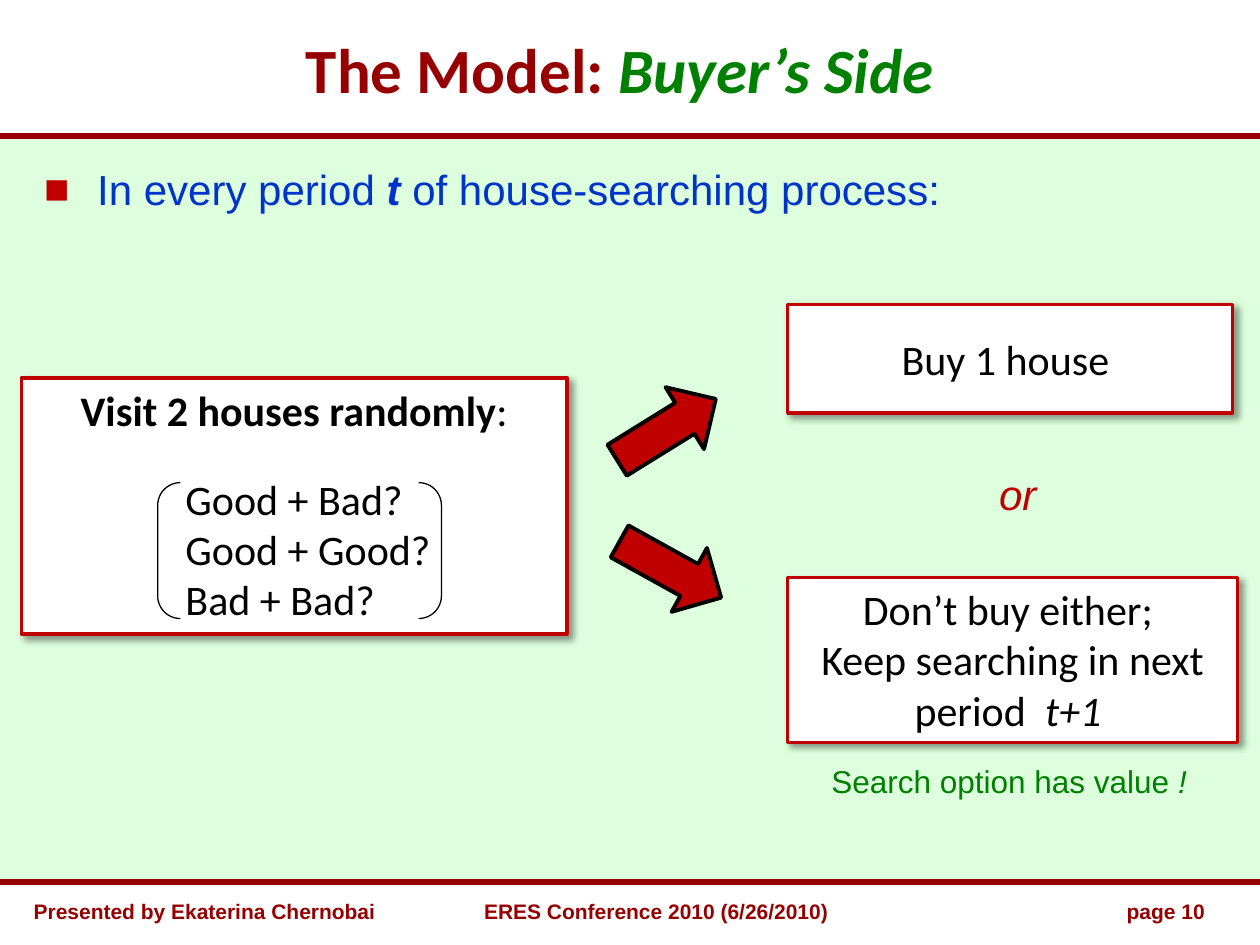
from lxml.etree import SubElement
from pptx import Presentation
from pptx.dml.color import RGBColor
from pptx.enum.shapes import MSO_CONNECTOR, MSO_SHAPE
from pptx.enum.text import MSO_ANCHOR, PP_ALIGN
from pptx.oxml.ns import qn
from pptx.util import Cm, Pt

MAROON, RED, GREEN, BLUE = "960000", "C00000", "008000", "0033CC"
BLACK, WHITE, MINT = "000000", "FFFFFF", "DDFFDD"
LEFT, CENTER, RIGHT = PP_ALIGN.LEFT, PP_ALIGN.CENTER, PP_ALIGN.RIGHT
TOP, MIDDLE = MSO_ANCHOR.TOP, MSO_ANCHOR.MIDDLE
SLIDE_W, SLIDE_H = 25.4, 19.05
RULES = (2.74, 17.78)  # heights of the lines above and below the body

# Content: a paragraph is a list of (text, style) runs, style made of "b" and "i"
TITLE = [("The Model: ", "b"), ("Buyer’s Side", "bi")]
INTRO = [("In every period ", ""), ("t", "bi"), (" of house-searching process:", "")]
VISIT = [("Visit 2 houses randomly", "b"), (":", "")]
OUTCOMES = ["Good + Bad?", "Good + Good?", "Bad + Bad?"]

# Boxes: left, top, width, height, anchor, paragraphs
BOXES = [
    (0.43, 7.62, 11, 5.16, TOP, [VISIT] + [[(pair, "")] for pair in OUTCOMES]),
    (15.88, 6.14, 8.97, 2.19, MIDDLE, [[("Buy 1 house ", "")]]),
    (15.88, 11.64, 9.07, 3.33, TOP, [
        [("Don’t buy either; ", "")],
        [("Keep searching in next period  ", ""), ("t+1", "i"), (" ", "")]]),
]
# Labels: left, top, width, height, size, colour, alignment, runs
LABELS = [
    (19.89, 9.31, 1.4, 1.3, 24, RED, LEFT, [("or", "i")]),
    (16.51, 15.24, 8.26, 1.07, 18, GREEN, LEFT,
     [("Search option has value ", ""), ("!", "i")]),
    (0.43, 17.98, 8.05, 0.64, 12, MAROON, LEFT,
     [("Presented by Ekaterina Chernobai", "b")]),
    (8.15, 17.98, 10.16, 0.64, 12, MAROON, CENTER,
     [("ERES Conference 2010 (6/26/2010)", "b")]),
    (19.89, 17.98, 4.65, 0.64, 12, MAROON, RIGHT, [("page 10", "b")]),
]
ARROWS = [(12.7, 7.49, 238.2), (12.78, 10.31, 299)]  # left, top, rotation


def color(value):
    return RGBColor.from_string(value)


def add_preset(preset, left, top, width, height, fill=None, line=None, weight=0):
    shape = slide.shapes.add_shape(preset, Cm(left), Cm(top), Cm(width), Cm(height))
    shape.shadow.inherit = False
    if fill:
        shape.fill.solid()
        shape.fill.fore_color.rgb = color(fill)
    else:
        shape.fill.background()
    if line:
        shape.line.color.rgb = color(line)
        shape.line.width = Pt(weight)
    else:
        shape.line.fill.background()
    return shape


def add_shadow(shape):
    effects = shape._element.spPr.find(qn("a:effectLst"))
    shadow = SubElement(effects, qn("a:outerShdw"), blurRad=str(Pt(4)),
                        dist=str(Pt(3)), dir=str(45 * 60000), algn="tl", rotWithShape="0")
    tint = SubElement(shadow, qn("a:srgbClr"), val=BLACK)
    SubElement(tint, qn("a:alpha"), val="40000")


def write(frame, paragraphs, size, font, tone, align=LEFT, anchor=TOP):
    frame.word_wrap = True
    frame.vertical_anchor = anchor
    for index, runs in enumerate(paragraphs):
        paragraph = frame.paragraphs[0] if index == 0 else frame.add_paragraph()
        paragraph.alignment = align
        paragraph.font.size = Pt(size)
        paragraph.font.name = font
        paragraph.font.color.rgb = color(tone)
        for text, style in runs:
            run = paragraph.add_run()
            run.text = text
            run.font.bold = "b" in style
            run.font.italic = "i" in style
    return frame.paragraphs


def add_text(left, top, width, height, size, font, tone, align, runs, anchor=TOP):
    box = slide.shapes.add_textbox(Cm(left), Cm(top), Cm(width), Cm(height))
    return write(box.text_frame, [runs], size, font, tone, align, anchor)[0]


def indent(paragraph, margin, first=0):
    properties = paragraph._p.get_or_add_pPr()
    properties.set("marL", str(Cm(margin)))
    properties.set("indent", str(Cm(first)))
    return properties


deck = Presentation()
deck.slide_width, deck.slide_height = Cm(SLIDE_W), Cm(SLIDE_H)
slide = deck.slides.add_slide(deck.slide_layouts[6])

# Body background between two rules
add_preset(MSO_SHAPE.RECTANGLE, 0, RULES[0], SLIDE_W, RULES[1] - RULES[0], MINT)
for height in RULES:
    rule = slide.shapes.add_connector(
        MSO_CONNECTOR.STRAIGHT, 0, Cm(height), Cm(SLIDE_W), Cm(height))
    rule.line.color.rgb = color(MAROON)
    rule.line.width = Pt(3)
    SubElement(rule._element.spPr, qn("a:effectLst"))

# Title with its second half in green
title = add_text(0.43, 0.43, 24.13, 1.9, 36, "Calibri", MAROON, CENTER, TITLE, MIDDLE)
title.runs[1].font.color.rgb = color(GREEN)

# Bulleted introduction
intro = add_text(0.64, 3.18, 21.16, 1.27, 24, "Arial", BLUE, LEFT, INTRO)
bullet = indent(intro, 1.07, -1.07)
bullet_color = SubElement(bullet, qn("a:buClr"))
SubElement(bullet_color, qn("a:srgbClr"), val=RED)
SubElement(bullet, qn("a:buFont"), typeface="Arial")
SubElement(bullet, qn("a:buChar"), char="■")

# Framed steps
steps = []
for left, top, width, height, anchor, paragraphs in BOXES:
    step = add_preset(MSO_SHAPE.RECTANGLE, left, top, width, height, WHITE, RED, 2)
    add_shadow(step)
    steps.append(write(step.text_frame, paragraphs, 24, "Calibri", BLACK, CENTER, anchor))

# Possible outcomes, indented inside brackets
outcomes = steps[0][1:]
for outcome in outcomes:
    outcome.alignment = LEFT
    indent(outcome, 3.06)
outcomes[0].space_before = Pt(22)
brackets = add_preset(MSO_SHAPE.DOUBLE_BRACKET, 3.18, 9.73, 5.72, 2.74, None, BLACK, 0.75)
brackets.adjustments[0] = 0.167

# Arrows to the two choices
for left, top, rotation in ARROWS:
    arrow = add_preset(MSO_SHAPE.DOWN_ARROW, left, top, 1.47, 2.34, RED, BLACK, 2.25)
    arrow.rotation = rotation

# Side remarks and footer
for left, top, width, height, size, tone, align, runs in LABELS:
    add_text(left, top, width, height, size, "Arial", tone, align, runs)

deck.save("out.pptx")
